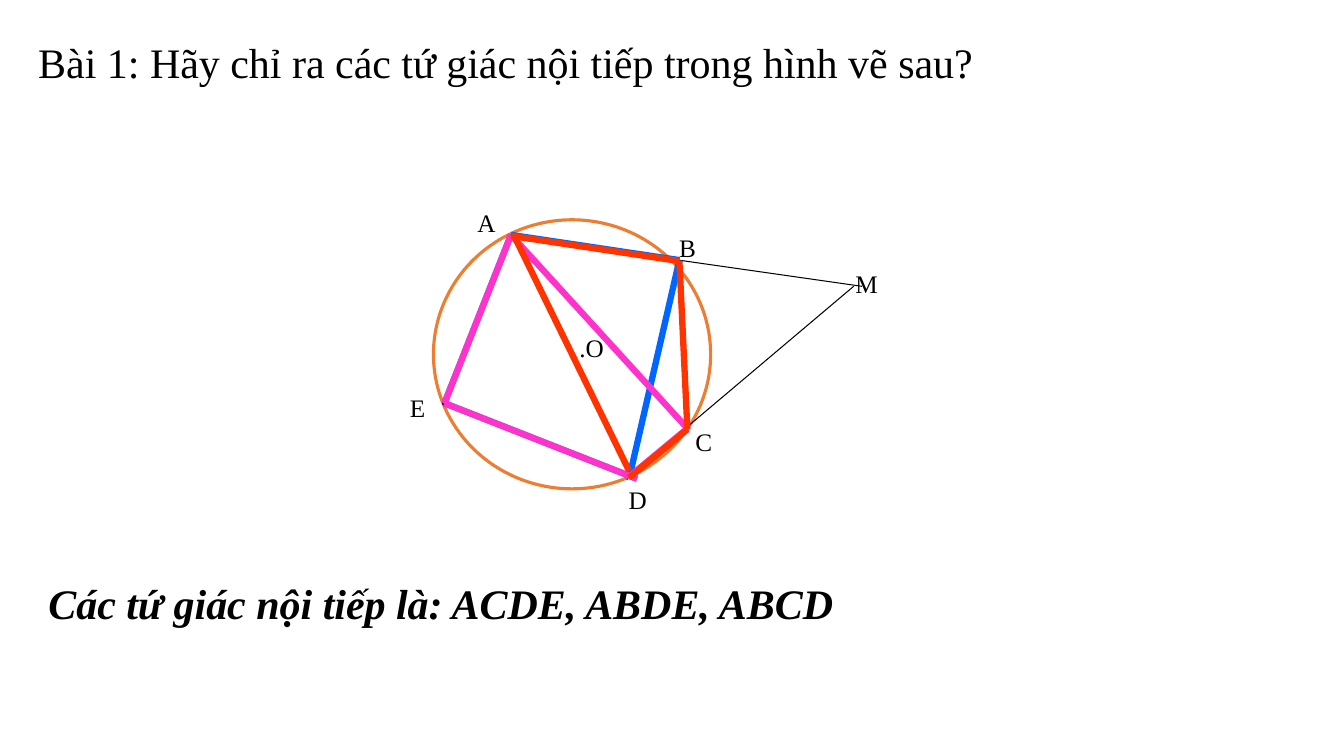
from lxml import etree
from pptx import Presentation
from pptx.dml.color import RGBColor
from pptx.enum.shapes import MSO_CONNECTOR, MSO_SHAPE
from pptx.enum.text import MSO_ANCHOR, PP_ALIGN
from pptx.oxml.ns import qn
from pptx.util import Pt

STRAIGHT = MSO_CONNECTOR.STRAIGHT
RECTANGLE, OVAL = MSO_SHAPE.RECTANGLE, MSO_SHAPE.OVAL
MIDDLE, JUSTIFY, LEFT = MSO_ANCHOR.MIDDLE, PP_ALIGN.JUSTIFY, PP_ALIGN.LEFT

BLACK = RGBColor(0x00, 0x00, 0x00)
WHITE = RGBColor(0xFF, 0xFF, 0xFF)
ORANGE = RGBColor(0xED, 0x7D, 0x31)
BLUE = RGBColor(0x00, 0x66, 0xFF)
PINK = RGBColor(0xFF, 0x33, 0xCC)
RED = RGBColor(0xFF, 0x33, 0x00)
FONT = "Times New Roman"

# Chords of the circle: x1, y1, x2, y2 in points
CHORDS = {
    "AB": (365, 167.8, 485.3, 185.8),
    "BC": (485.3, 185.8, 491, 306),
    "CD": (449.3, 340.6, 491, 306),
    "DE": (317.5, 288, 455, 342),
    "EA": (365, 167.8, 317.5, 288),
    "AC": (365, 167.8, 491, 306),
    "BD": (449.3, 342, 485.3, 185.8),
    "AD": (366.5, 166.3, 449.3, 335.5),
}
# Secants from M, which contain AB and CD
SECANTS = [(363.6, 168.5, 615.6, 204.5), (447.8, 341.3, 609.8, 204.5)]
# Sides, colour and drop of each highlighted quadrilateral
QUADRILATERALS = [
    (("AB", "EA", "DE", "BD"), BLUE, 0),
    (("EA", "DE", "CD", "AC"), PINK, 0),
    (("AB", "BC", "CD", "AD"), RED, 0.7),
]
# Left and top of each label box
LABELS = {
    "A": (334, 144.7), "B": (478, 162.7), "M": (604, 188), "C": (489.6, 301),
    "D": (442, 342.7), "E": (285.8, 276.5), ".O": (406.8, 234),
}


def add_line(page, ends, color, width, dx=0, dy=0):
    x1, y1, x2, y2 = ends
    line = page.shapes.add_connector(
        STRAIGHT, Pt(x1 + dx), Pt(y1 + dy), Pt(x2 + dx), Pt(y2 + dy))
    line.line.color.rgb = color
    line.line.width = Pt(width)
    etree.SubElement(line._element.spPr, qn("a:effectLst"))


def write(box, text, size, align, emphasis=False):
    para = box.text_frame.paragraphs[0]
    para.text = text
    para.alignment = align
    font = para.font
    font.name, font.size, font.color.rgb = FONT, Pt(size), BLACK
    font.bold = font.italic = emphasis


def add_sentence(page, left, top, text, emphasis=False):
    box = page.shapes.add_shape(
        RECTANGLE, Pt(left), Pt(top), Pt(927.4), Pt(44))
    box.shadow.inherit = False
    box.fill.solid()
    box.fill.fore_color.rgb = WHITE
    box.line.color.rgb = WHITE
    box.line.width = Pt(0.75)
    box.text_frame.word_wrap = True
    box.text_frame.vertical_anchor = MIDDLE
    write(box, text, 30, JUSTIFY, emphasis)


def add_label(page, text, left, top):
    box = page.shapes.add_textbox(Pt(left), Pt(top), Pt(36), Pt(29))
    box.text_frame.word_wrap = True
    write(box, text, 18, LEFT)


def add_circle(page):
    circle = page.shapes.add_shape(
        OVAL, Pt(309.6), Pt(157), Pt(198), Pt(192.2))
    circle.shadow.inherit = False
    circle.fill.background()
    circle.line.color.rgb = ORANGE
    circle.line.width = Pt(2.25)


def main():
    deck = Presentation()
    deck.slide_width, deck.slide_height = Pt(960), Pt(540)
    page = deck.slides.add_slide(deck.slide_layouts[6])

    # Question
    add_sentence(page, 20.2, 22.3,
                 "Bài 1: Hãy chỉ ra các tứ giác nội tiếp trong hình vẽ sau?")

    # Base figure: circle, thin chords, secants and labels
    add_circle(page)
    for ends in CHORDS.values():
        add_line(page, ends, BLACK, 0.75, -1.4, 0.7)
    for ends in SECANTS:
        add_line(page, ends, BLACK, 0.75)
    for name, (left, top) in LABELS.items():
        add_label(page, name, left, top)

    # Highlighted quadrilaterals
    for sides, color, drop in QUADRILATERALS:
        for side in sides:
            add_line(page, CHORDS[side], color, 4.5, dy=drop)

    # Answer
    add_sentence(page, 27.4, 408.2,
                 "Các tứ giác nội tiếp là: ACDE, ABDE, ABCD", emphasis=True)

    deck.save("out.pptx")


if __name__ == "__main__":
    main()
